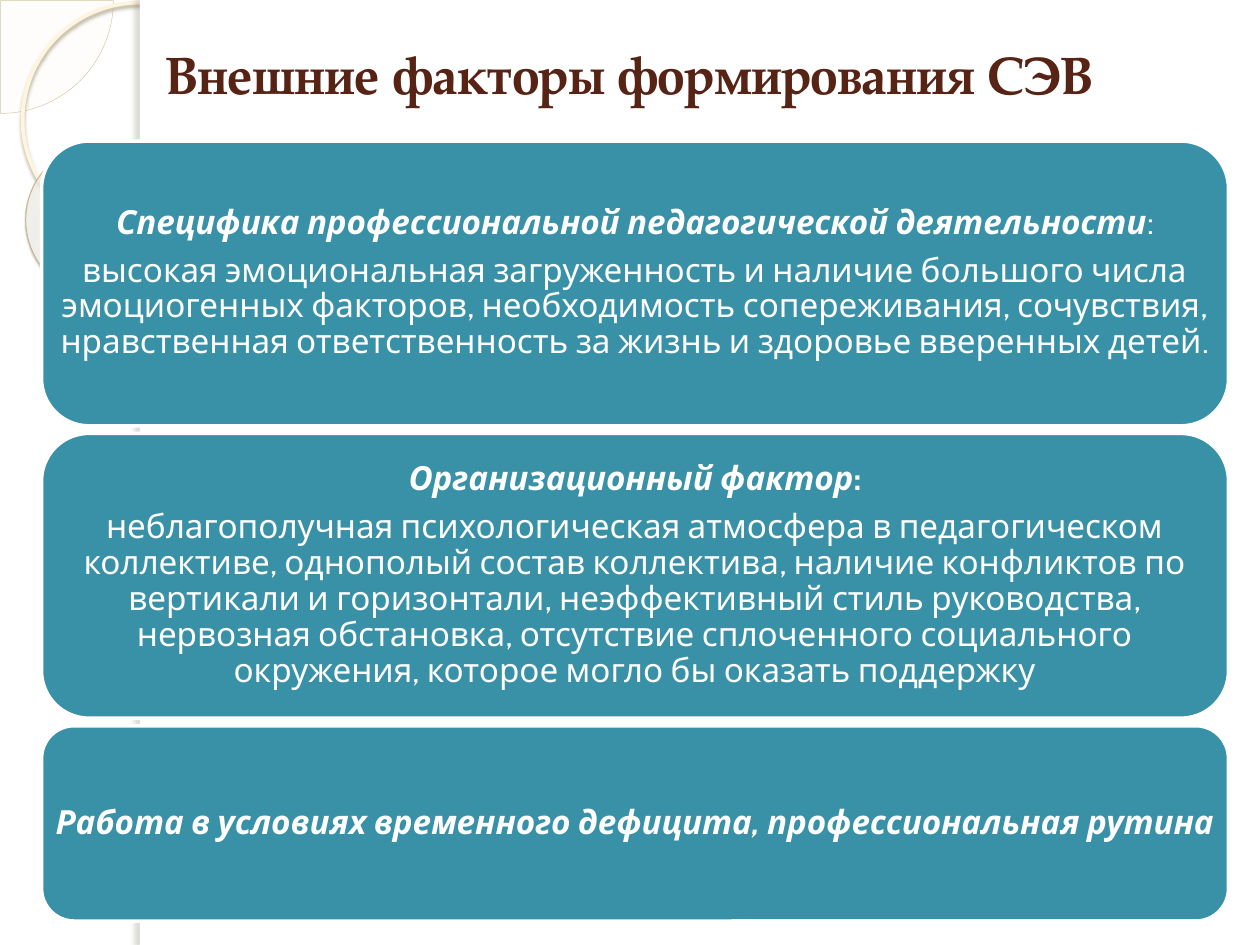
import pptx
import pptx.util
import pptx.dml.color
import pptx.enum.shapes
import pptx.enum.text
import pptx.oxml
import pptx.oxml.ns
from dataclasses import dataclass

Inches, Pt = pptx.util.Inches, pptx.util.Pt
SHAPE = pptx.enum.shapes.MSO_SHAPE
ALIGN = pptx.enum.text.PP_ALIGN
MIDDLE = pptx.enum.text.MSO_ANCHOR.MIDDLE
WIDTH, HEIGHT = 10, 7.5


@dataclass(frozen=True)
class Theme:
    title_font: str = "TeX Gyre Pagella"
    body_font: str = "Cabin"
    title_size: float = 30
    body_size: float = 19
    title: str = "572314"
    card: str = "3891A7"
    white: str = "FFFFFF"
    pie_fill: str = "FEFAF4"
    pie_line: str = "D3C39F"
    ring_line: str = "FFF5DE"
    donut_line: str = "C7B893"


THEME = Theme()

# Card grid: one column, rows of different height with equal gaps
CARD_LEFT, CARD_TOP, CARD_WIDTH, CARD_GAP = 0.33, 1.12, 9.42, 0.06
BOLD_ITALIC, BOLD, PLAIN = (True, True), (True, False), (False, False)
CARDS = [  # height, paragraphs of (text, (bold, italic)) runs
    (2.26, [
        [("Специфика профессиональной педагогической деятельности", BOLD_ITALIC),
         (":", PLAIN)],
        [("высокая эмоциональная загруженность и наличие большого числа "
          "эмоциогенных факторов, необходимость сопереживания, сочувствия, "
          "нравственная ответственность за жизнь и здоровье вверенных детей.", PLAIN)],
    ]),
    (2.26, [
        [("Организационный фактор", BOLD_ITALIC), (":", BOLD)],
        [("неблагополучная психологическая атмосфера в педагогическом коллективе, "
          "однополый состав коллектива, наличие конфликтов по вертикали и "
          "горизонтали, неэффективный стиль руководства, нервозная обстановка, "
          "отсутствие сплоченного социального окружения, которое могло бы "
          "оказать поддержку", PLAIN)],
    ]),
    (1.55, [
        [("Работа в условиях временного дефицита, профессиональная рутина",
          BOLD_ITALIC)],
    ]),
]


def rgb(value):
    return pptx.dml.color.RGBColor.from_string(value)


def drawing_xml(markup):
    """Parse a fragment whose first tag gets the drawing namespace."""
    tag, rest = markup.split(">", 1)
    return pptx.oxml.parse_xml(f"{tag} {pptx.oxml.ns.nsdecls('a')}>{rest}")


def colour_xml(colour, alpha):
    return f'<a:srgbClr val="{colour}"><a:alpha val="{alpha * 1000}"/></a:srgbClr>'


def add_shape(page, kind, left, top, width, height, fill=None, line=None, weight=1):
    shape = page.shapes.add_shape(
        kind, Inches(left), Inches(top), Inches(width), Inches(height))
    shape.shadow.inherit = False
    if fill:
        shape.fill.solid()
        shape.fill.fore_color.rgb = rgb(fill)
    else:
        shape.fill.background()
    if line:
        shape.line.color.rgb = rgb(line)
        shape.line.width = Pt(weight)
    else:
        shape.line.fill.background()
    return shape


def set_shadow(shape, colour, alpha, blur, distance, angle):
    effects = shape._element.spPr.find(pptx.oxml.ns.qn("a:effectLst"))
    effects.append(drawing_xml(
        f'<a:outerShdw blurRad="{Pt(blur)}" dist="{Pt(distance)}" '
        f'dir="{angle * 60000}" algn="tl" rotWithShape="0">'
        f"{colour_xml(colour, alpha)}</a:outerShdw>"))


def set_radial_fill(shape, stops):
    stop_list = "".join(f'<a:gs pos="{position * 1000}">{colour_xml(colour, alpha)}</a:gs>'
                        for position, colour, alpha in stops)
    gradient = drawing_xml(
        f'<a:gradFill><a:gsLst>{stop_list}</a:gsLst><a:path path="circle">'
        '<a:fillToRect l="-408000" t="-50000" r="508000" b="150000"/>'
        "</a:path></a:gradFill>")
    properties = shape._element.spPr
    properties.replace(properties.find(pptx.oxml.ns.qn("a:noFill")), gradient)


def add_run(para, text, font, size, colour, bold, italic=False):
    span = para.add_run()
    span.text = text
    span.font.name, span.font.size = font, Pt(size)
    span.font.bold, span.font.italic = bold, italic
    span.font.color.rgb = rgb(colour)


def add_decoration(page):
    # Circles in the top left corner
    pie = add_shape(page, SHAPE.PIE, -0.89, -0.89, 1.79, 1.79,
                    THEME.pie_fill, THEME.pie_line, 0.25)
    pie.adjustments[0], pie.adjustments[1] = 0, 54
    colour = pie._element.spPr.find(".//" + pptx.oxml.ns.qn("a:srgbClr"))
    colour.append(drawing_xml('<a:alpha val="33000"></a:alpha>'))

    ring = add_shape(page, SHAPE.OVAL, 0.18, 0.02, 1.86, 1.86,
                     line=THEME.ring_line, weight=2.15)
    set_shadow(ring, "B0A68F", 85, 2, 2, 90)

    donut = add_shape(page, SHAPE.DONUT, 0.2, 1.15, 1.23, 1.21,
                      line=THEME.donut_line, weight=0.58)
    donut.adjustments[0] = 0.12
    donut.rotation = 38.6
    set_radial_fill(donut, [(0, "FFFCF6", 70), (70, "FFFEFB", 55), (100, "F0D28E", 60)])
    set_shadow(donut, "5A5444", 35, 1, 1.2, 75)

    # White panel and its shaded left edge
    edge = 1.11
    add_shape(page, SHAPE.RECTANGLE, edge, 0, WIDTH - edge, HEIGHT, THEME.white)
    strip = add_shape(page, SHAPE.RECTANGLE, edge, 0, 0.08, HEIGHT, THEME.white)
    set_shadow(strip, "736F63", 25, 3, 3, 180)


def set_title(page, text):
    title = page.shapes.title
    page.shapes._spTree.append(title._element)  # in front of the panel
    title.left, title.top = Inches(0.5), Inches(0.25)
    title.width, title.height = Inches(WIDTH - 2 * 0.5), Inches(0.67)
    title.text_frame.vertical_anchor = MIDDLE
    para = title.text_frame.paragraphs[0]
    para.alignment = ALIGN.CENTER
    add_run(para, text, THEME.title_font, THEME.title_size, THEME.title, True)


def add_card(page, top, height, paragraphs):
    box = add_shape(page, SHAPE.ROUNDED_RECTANGLE, CARD_LEFT, top, CARD_WIDTH, height,
                    THEME.card, THEME.white, 2)
    frame = box.text_frame
    frame.word_wrap = True
    frame.vertical_anchor = MIDDLE
    frame.margin_left = frame.margin_right = 0
    frame.margin_top = frame.margin_bottom = Inches(0.08)
    for index, runs in enumerate(paragraphs):
        para = frame.add_paragraph() if index else frame.paragraphs[0]
        para.alignment = ALIGN.CENTER
        para.line_spacing = 0.9
        para.space_after = Pt(0.35 * THEME.body_size)
        for text, (bold, italic) in runs:
            add_run(para, text, THEME.body_font, THEME.body_size, THEME.white,
                    bold, italic)


def main():
    deck = pptx.Presentation()
    deck.slide_width, deck.slide_height = Inches(WIDTH), Inches(HEIGHT)
    page = deck.slides.add_slide(deck.slide_layouts[5])  # title only
    add_decoration(page)
    set_title(page, "Внешние факторы формирования СЭВ")
    top = CARD_TOP
    for height, paragraphs in CARDS:
        add_card(page, top, height, paragraphs)
        top += height + CARD_GAP
    deck.save("out.pptx")


if __name__ == "__main__":
    main()
